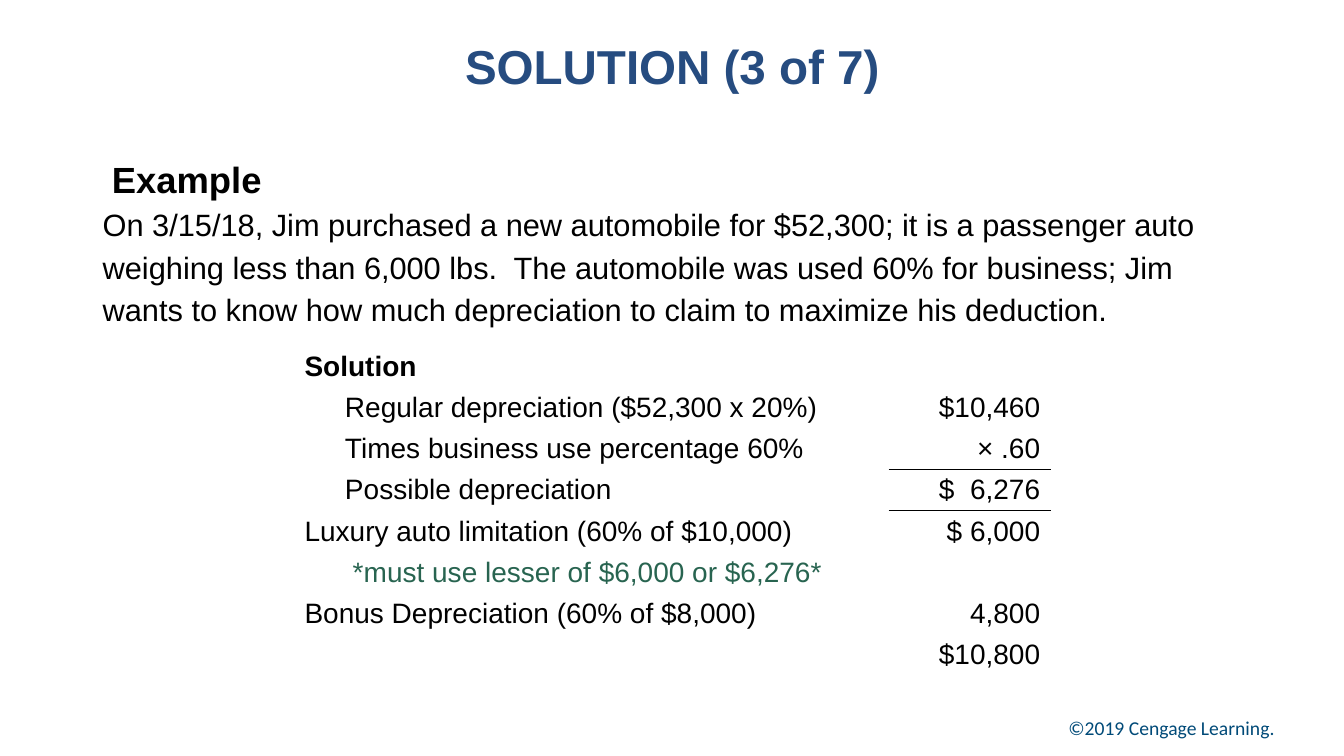
from pptx import Presentation
from pptx.dml.color import RGBColor
from pptx.enum.text import MSO_ANCHOR as Anchor, PP_ALIGN as Align
from pptx.oxml import parse_xml
from pptx.oxml.ns import nsdecls
from pptx.util import Cm, Pt

BLACK = RGBColor(0x00, 0x00, 0x00)
TITLE_BLUE = RGBColor(0x26, 0x4C, 0x80)
FOOTER_BLUE = RGBColor(0x00, 0x4A, 0x78)
NOTE_GREEN = RGBColor(0x28, 0x64, 0x50)

TITLE = "SOLUTION (3 of 7)"
EXAMPLE_HEADING = "Example"
EXAMPLE = (
    "On 3/15/18, Jim purchased a new automobile for $52,300; it is a passenger auto "
    "weighing less than 6,000 lbs.  The automobile was used 60% for business; Jim wants "
    "to know how much depreciation to claim to maximize his deduction."
)
COPYRIGHT = "©2019 Cengage Learning. "
SOLUTION_ROWS = [
    {"label": "Solution", "bold": True},
    {"label": "Regular depreciation ($52,300 x 20%)", "amount": "$10,460", "indent": True},
    {"label": "Times business use percentage 60%", "amount": "× .60", "indent": True, "rule": True},
    {"label": "Possible depreciation", "amount": "$  6,276", "indent": True, "rule": True},
    {"label": "Luxury auto limitation (60% of $10,000)", "amount": "$ 6,000"},
    {"label": " *must use lesser of $6,000 or $6,276*", "indent": True, "color": NOTE_GREEN},
    {"label": "Bonus Depreciation (60% of $8,000)", "amount": "4,800"},
    {"amount": "$10,800"},
]

LEFT, WIDTH = Cm(2.34), Cm(29.21)
TABLE_LEFT, TABLE_TOP = Cm(7.42), Cm(8.71)
COLUMN_WIDTHS = [Cm(14.99), Cm(4.06)]
ROW_HEIGHT = Cm(1.04)
INDENT = Cm(1.02)


def style(paragraph, size, color=BLACK, bold=False, name="Arial", align=Align.LEFT):
    paragraph.alignment = align
    font = paragraph.font
    font.name, font.size, font.bold = name, Pt(size), bold
    font.color.rgb = color


def add_text(slide, box, texts, anchor):
    frame = slide.shapes.add_textbox(*box).text_frame
    frame.word_wrap = True
    frame.vertical_anchor = anchor
    frame.text = "\n".join(texts)
    return frame.paragraphs


def set_indent(paragraph, left, first=0):
    properties = paragraph._p.get_or_add_pPr()
    properties.set("marL", str(int(left)))
    properties.set("indent", str(int(first)))


def add_rule(cell, side):
    line = parse_xml(
        f'<a:{side} {nsdecls("a")} w="{Pt(1)}"><a:solidFill>'
        f'<a:srgbClr val="{BLACK}"/></a:solidFill></a:{side}>'
    )
    cell._tc.get_or_add_tcPr().insert(0, line)


def add_solution(slide):
    table = slide.shapes.add_table(
        len(SOLUTION_ROWS), len(COLUMN_WIDTHS), TABLE_LEFT, TABLE_TOP,
        sum(COLUMN_WIDTHS), ROW_HEIGHT * len(SOLUTION_ROWS),
    ).table
    table.first_row = table.horz_banding = False
    for column, width in zip(table.columns, COLUMN_WIDTHS):
        column.width = width

    for index, entry in enumerate(SOLUTION_ROWS):
        table.rows[index].height = ROW_HEIGHT
        for column, (key, align) in enumerate([("label", Align.LEFT), ("amount", Align.RIGHT)]):
            cell = table.cell(index, column)
            cell.fill.background()
            cell.vertical_anchor = Anchor.MIDDLE
            cell.margin_top = cell.margin_bottom = Cm(0.05)
            cell.text = entry.get(key, "")
            paragraph = cell.text_frame.paragraphs[0]
            style(paragraph, 20, entry.get("color", BLACK), entry.get("bold", False), align=align)
            if key == "label" and entry.get("indent"):
                set_indent(paragraph, INDENT)

        amount_cell = table.cell(index, 1)
        if entry.get("rule"):
            add_rule(amount_cell, "lnB")
        if index and SOLUTION_ROWS[index - 1].get("rule"):
            add_rule(amount_cell, "lnT")


def main():
    presentation = Presentation()
    presentation.slide_width, presentation.slide_height = Cm(33.87), Cm(19.05)
    slide = presentation.slides.add_slide(presentation.slide_layouts[6])

    footer = add_text(slide, (Cm(8.03), Cm(17.5), Cm(24.46), Cm(1.27)), [COPYRIGHT], Anchor.BOTTOM)
    style(footer[0], 14, FOOTER_BLUE, name="Calibri", align=Align.RIGHT)

    title = add_text(slide, (LEFT, Cm(0.38), WIDTH, Cm(2.54)), [TITLE], Anchor.MIDDLE)
    style(title[0], 34, TITLE_BLUE, bold=True, align=Align.CENTER)

    heading, example = add_text(
        slide, (LEFT, Cm(3.66), WIDTH, Cm(4.42)), [EXAMPLE_HEADING, EXAMPLE], Anchor.TOP
    )
    style(heading, 26, bold=True)
    set_indent(heading, INDENT, -Cm(0.79))
    style(example, 22)
    heading.line_spacing = example.line_spacing = 1.15

    add_solution(slide)
    presentation.save("out.pptx")


if __name__ == "__main__":
    main()
